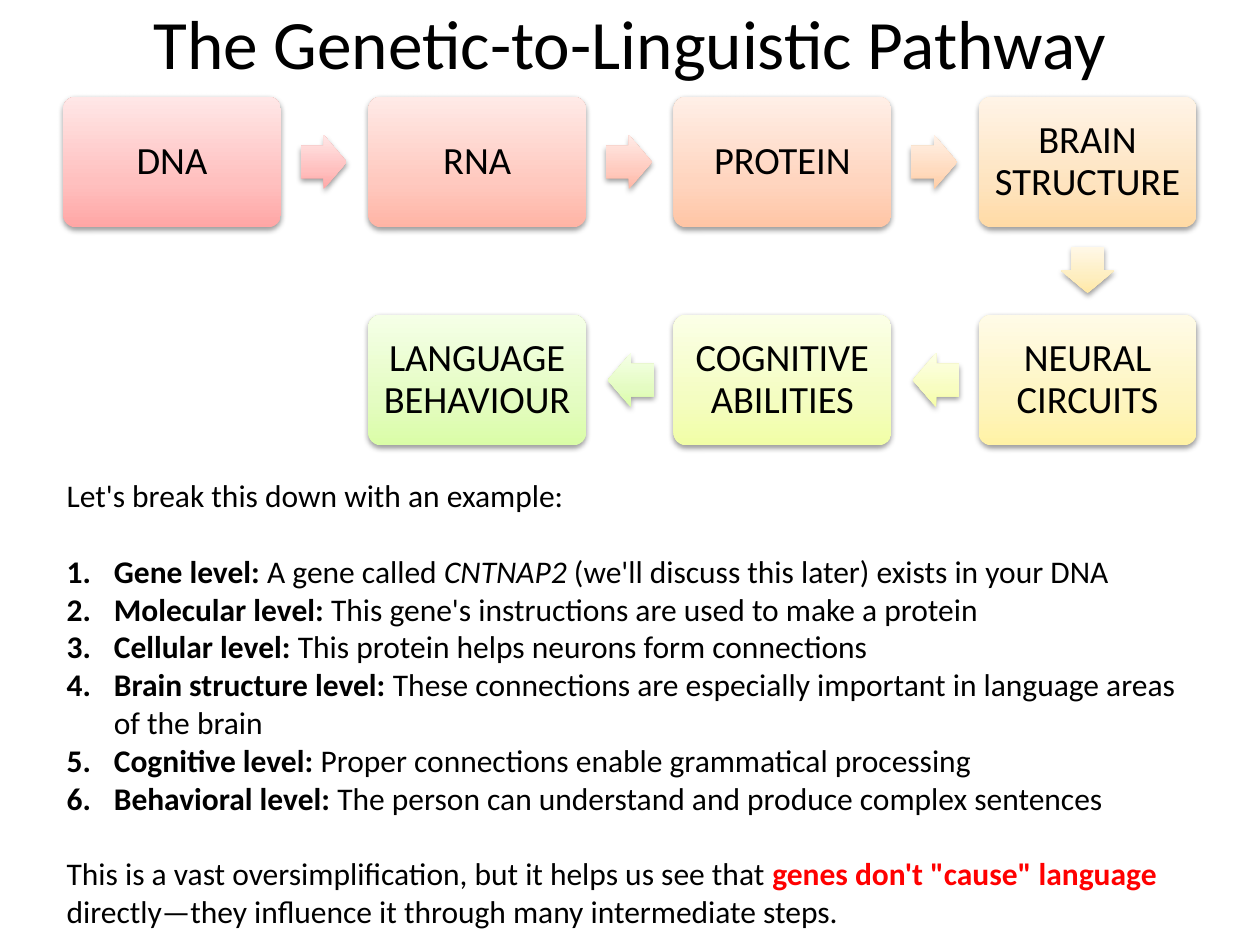
from pptx import Presentation
from pptx.dml.color import RGBColor
from pptx.enum.shapes import MSO_SHAPE
from pptx.enum.text import MSO_ANCHOR, PP_ALIGN
from pptx.oxml import parse_xml
from pptx.oxml.ns import nsdecls, qn
from pptx.util import Pt


def rgb(value):
    return RGBColor.from_string(value)


class Deck:
    """Holds the text style and the current slide, and draws each kind of element."""

    font = {"name": "Calibri", "size": Pt(18), "bold": False, "italic": False}
    color = "000000"

    def __init__(self, width, height):
        self.prs = Presentation()
        self.prs.slide_width, self.prs.slide_height = Pt(width), Pt(height)
        self.s = self.prs.slides.add_slide(self.prs.slide_layouts[6])

    def run(self, p, text, color=None, **fmt):
        r = p.add_run()
        r.text = text
        for key, value in {**self.font, **fmt}.items():
            setattr(r.font, key, value)
        r.font.color.rgb = rgb(color or self.color)

    def frame(self, sp, **fmt):
        for key, value in {"word_wrap": True, **fmt}.items():
            setattr(sp.text_frame, key, value)
        return sp.text_frame

    def textbox(self, box, **fmt):
        return self.frame(self.s.shapes.add_textbox(*map(Pt, box)), **fmt)

    def title(self, box, text):
        p = self.textbox(box, vertical_anchor=MSO_ANCHOR.MIDDLE).paragraphs[0]
        p.alignment = PP_ALIGN.CENTER
        self.run(p, text, size=Pt(39.6))

    def shape(self, kind, center, size, adjustments, colors):
        (x, y), (w, h) = center, size
        sp = self.s.shapes.add_shape(kind, Pt(x - w / 2), Pt(y - h / 2), Pt(w), Pt(h))
        for i, value in enumerate(adjustments):
            sp.adjustments[i] = value
        sp.fill.gradient()
        grad = sp._element.spPr.find(qn("a:gradFill"))
        stops = "".join(
            f'<a:gs pos="{pos}"><a:srgbClr val="{rgb(c)}"/></a:gs>'
            for pos, c in zip((0, 35000, 100000), colors)
        )
        grad.getparent().replace(grad, parse_xml(
            f'<a:gradFill {nsdecls("a")} rotWithShape="0"><a:gsLst>{stops}</a:gsLst>'
            '<a:lin ang="16200000" scaled="0"/></a:gradFill>'))
        sp.line.fill.background()
        sp.shadow.inherit = False
        sp._element.spPr.find(qn("a:effectLst")).append(parse_xml(
            f'<a:outerShdw {nsdecls("a")} blurRad="40000" dist="20000" dir="5400000" '
            'rotWithShape="0"><a:srgbClr val="000000"><a:alpha val="38000"/></a:srgbClr>'
            '</a:outerShdw>'))
        return sp

    def step(self, center, size, text, colors):
        sp = self.shape(MSO_SHAPE.ROUNDED_RECTANGLE, center, size, [0.1], colors)
        margins = {f"margin_{side}": Pt(6) for side in ("left", "top", "right", "bottom")}
        tf = self.frame(sp, vertical_anchor=MSO_ANCHOR.MIDDLE, **margins)
        p = tf.paragraphs[0]
        p.alignment, p.line_spacing = PP_ALIGN.CENTER, 0.9
        self.run(p, text, size=Pt(22))

    def arrow(self, center, size, angle, colors):
        sp = self.shape(MSO_SHAPE.RIGHT_ARROW, center, size, [0.6, 0.5], colors)
        sp.rotation = angle

    def paragraph(self, tf, runs, first=False, numbered=False, before=0):
        p = tf.paragraphs[0] if first else tf.add_paragraph()
        if numbered:
            pPr = p._p.get_or_add_pPr()
            pPr.set("marL", str(Pt(27)))
            pPr.set("indent", str(-Pt(27)))
            pPr.append(parse_xml(f'<a:buAutoNum {nsdecls("a")} type="arabicPeriod"/>'))
        p.space_before = Pt(before)
        for text, fmt in runs:
            self.run(p, text, **fmt)


STEPS = [
    ("DNA", 0, 0, ("FFA6A5", "FFC0BF", "FFE7E7")),
    ("RNA", 1, 0, ("FFB4A5", "FFC9BF", "FFEAE7")),
    ("PROTEIN", 2, 0, ("FFC5A5", "FFD5BF", "FFEFE7")),
    ("BRAIN STRUCTURE", 3, 0, ("FFDAA5", "FEE4C0", "FFF4E7")),
    ("NEURAL CIRCUITS", 3, 1, ("FFF2A5", "FEF5C0", "FFFBE7")),
    ("COGNITIVE ABILITIES", 2, 1, ("F1FEA6", "F4FDC1", "FBFFE7")),
    ("LANGUAGE BEHAVIOUR", 1, 1, ("DAFDA7", "E4FCC2", "F5FFE7")),
]
ARROWS = [
    ("FFA6A5", "FFC0BF", "FFE7E7"),
    ("FFB7A5", "FFCBBF", "FFEBE7"),
    ("FFCDA5", "FFDBBF", "FFF1E7"),
    ("FFE8A5", "FEEEC0", "FFF8E7"),
    ("F6FEA6", "F8FDC1", "FDFFE7"),
    ("DAFDA7", "E4FCC2", "F5FFE7"),
]
ANGLES = {(1, 0): 0, (0, 1): 90, (-1, 0): 180}
BOX, ARROW, GAP = (124.5, 74.7), (26.4, 30.9), 11.2
BOLD, ITALIC, PLAIN = {"bold": True}, {"italic": True}, {}
LEVELS = [
    ("Gene level:", [(" A gene called ", PLAIN), ("CNTNAP2", ITALIC),
                     (" (we'll discuss this later) exists in your DNA", PLAIN)]),
    ("Molecular level:", [(" This gene's instructions are used to make a protein", PLAIN)]),
    ("Cellular level:", [(" This protein helps neurons form connections", PLAIN)]),
    ("Brain structure level:", [(" These connections are especially important in "
                                 "language areas of the brain", PLAIN)]),
    ("Cognitive level:", [(" Proper connections enable grammatical processing", PLAIN)]),
    ("Behavioral level:", [(" The person can understand and produce complex sentences", PLAIN)]),
]
CLOSING = [
    ("This is a vast oversimplification, but it helps us see that ", PLAIN),
    ("genes don't \"cause\" language", {"bold": True, "color": "FF0000"}),
    (" directly—they influence it through many intermediate steps.", PLAIN),
]


def center(col, row):
    return 98.3 + 174.4 * col, 92.6 + 124.6 * row


def main():
    deck = Deck(720, 540)
    deck.title((36, -0.7, 648, 49.7), "The Genetic-to-Linguistic Pathway")
    for text, col, row, colors in STEPS:
        deck.step(center(col, row), BOX, text, colors)
    for (_, col, row, _), (_, to_col, to_row, _), colors in zip(STEPS, STEPS[1:], ARROWS):
        (x, y), (dx, dy) = center(col, row), (to_col - col, to_row - row)
        reach = GAP + ARROW[0] / 2
        spot = x + dx * (BOX[0] / 2 + reach), y + dy * (BOX[1] / 2 + reach)
        deck.arrow(spot, ARROW, ANGLES[dx, dy], colors)

    tf = deck.textbox((31, 268.6, 657.4, 269.3))
    deck.paragraph(tf, [("Let's break this down with an example:", PLAIN)], first=True)
    for i, (level, runs) in enumerate(LEVELS):
        deck.paragraph(tf, [(level, BOLD), *runs], numbered=True, before=0 if i else 21.6)
    deck.paragraph(tf, CLOSING, before=21.6)
    deck.prs.save("out.pptx")


if __name__ == "__main__":
    main()
